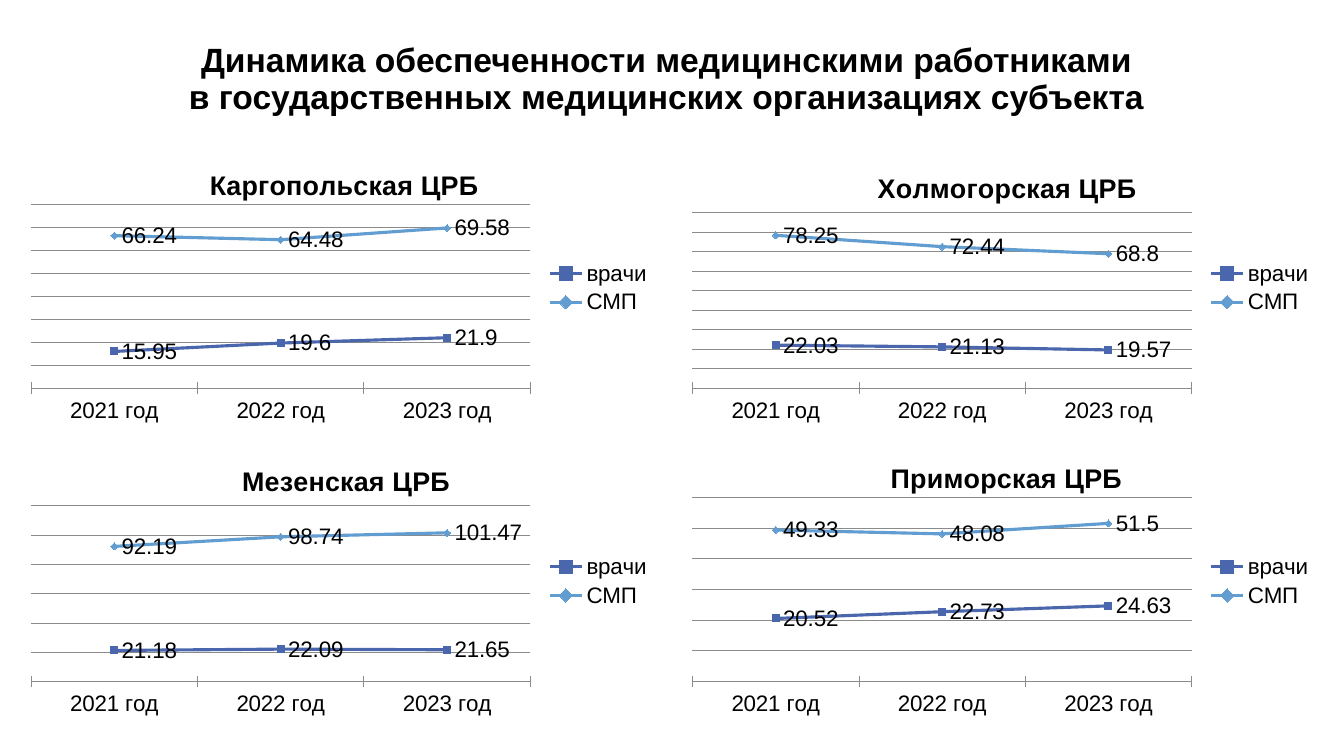
from dataclasses import dataclass

from lxml import etree
from pptx import Presentation
from pptx.chart.data import CategoryChartData
from pptx.dml.color import RGBColor
from pptx.enum.chart import (XL_CHART_TYPE, XL_LABEL_POSITION, XL_LEGEND_POSITION,
                             XL_MARKER_STYLE, XL_TICK_LABEL_POSITION, XL_TICK_MARK)
from pptx.enum.text import MSO_ANCHOR, PP_ALIGN
from pptx.oxml.ns import qn
from pptx.util import Inches, Pt

LINE_MARKERS = XL_CHART_TYPE.LINE_MARKERS
LABEL_RIGHT = XL_LABEL_POSITION.RIGHT
LEGEND_RIGHT = XL_LEGEND_POSITION.RIGHT
TICK_CROSS = XL_TICK_MARK.CROSS
LABELS_LOW = XL_TICK_LABEL_POSITION.NEXT_TO_AXIS
MARKERS = (XL_MARKER_STYLE.SQUARE, XL_MARKER_STYLE.DIAMOND)
MIDDLE = MSO_ANCHOR.MIDDLE
CENTER = PP_ALIGN.CENTER


@dataclass(frozen=True)
class Theme:
    font: str = "Arial"
    text: RGBColor = RGBColor(0, 0, 0)
    paper: RGBColor = RGBColor(255, 255, 255)
    grid: RGBColor = RGBColor.from_string("8B8B8B")
    series: tuple = (RGBColor.from_string("4A66AC"), RGBColor.from_string("629DD1"))
    heading_size: float = 24
    chart_title_size: float = 19.2
    chart_size: float = 16
    grid_width: float = 0.5
    series_width: float = 2.25
    marker_size: int = 5


THEME = Theme()
YEARS = ("2021 год", "2022 год", "2023 год")
STAFF = ("врачи", "СМП")


@dataclass(frozen=True)
class Hospital:
    name: str
    doctors: tuple
    nurses: tuple
    axis_max: int
    axis_step: int
    title_at: tuple  # left and top, as shares of the chart
    plot_top: float  # share of the chart height


# Row by row, left to right
HOSPITALS = (
    Hospital("Каргопольская ЦРБ", (15.95, 19.6, 21.9), (66.24, 64.48, 69.58),
             80, 10, (0.29, 0.05), 0.2),
    Hospital("Холмогорская ЦРБ", (22.03, 21.13, 19.57), (78.25, 72.44, 68.8),
             90, 10, (0.3, 0.06), 0.23),
    Hospital("Мезенская ЦРБ", (21.18, 22.09, 21.65), (92.19, 98.74, 101.47),
             120, 20, (0.34, 0.06), 0.23),
    Hospital("Приморская ЦРБ", (20.52, 22.73, 24.63), (49.33, 48.08, 51.5),
             60, 10, (0.32, 0.05), 0.2),
)
PLOT_LEFT, PLOT_WIDTH, PLOT_BOTTOM = 0.02, 0.775, 0.86


def style_font(font, size, bold=False):
    font.name = THEME.font
    font.size = Pt(size)
    font.bold = bold
    font.color.rgb = THEME.text


def style_line(line, color, width):
    line.color.rgb = color
    line.width = Pt(width)


def set_layout(parent, settings):
    """Fix the place of a chart part, in shares of the chart."""
    layout = parent.find(qn("c:layout"))
    if layout is None:
        layout = etree.Element(qn("c:layout"))
        text = parent.find(qn("c:tx"))
        parent.insert(0 if text is None else parent.index(text) + 1, layout)
    for child in list(layout):
        layout.remove(child)
    manual = etree.SubElement(layout, qn("c:manualLayout"))
    for tag, value in settings.items():
        etree.SubElement(manual, qn(f"c:{tag}")).set("val", str(value))


def add_heading(page, text, left, top, width, height):
    box = page.shapes.add_textbox(Inches(left), Inches(top), Inches(width), Inches(height))
    frame = box.text_frame
    frame.word_wrap = True
    frame.vertical_anchor = MIDDLE
    frame.margin_left = frame.margin_right = frame.margin_top = frame.margin_bottom = 0
    para = frame.paragraphs[0]
    para.text = text
    para.alignment = CENTER
    para.line_spacing = 0.9
    for span in para.runs:
        style_font(span.font, THEME.heading_size, bold=True)


def style_axes(chart, hospital):
    years = chart.category_axis
    years.major_tick_mark = TICK_CROSS
    years.tick_label_position = LABELS_LOW
    style_line(years.format.line, THEME.grid, THEME.grid_width)

    values = chart.value_axis
    values.minimum_scale = 0
    values.maximum_scale = hospital.axis_max
    values.major_unit = hospital.axis_step
    values.has_major_gridlines = True
    style_line(values.major_gridlines.format.line, THEME.grid, THEME.grid_width)
    values.visible = False


def style_series(series, color, marker_style):
    series.smooth = False
    style_line(series.format.line, color, THEME.series_width)
    marker = series.marker
    marker.style = marker_style
    marker.size = THEME.marker_size
    marker.format.fill.solid()
    marker.format.fill.fore_color.rgb = color
    style_line(marker.format.line, color, 0.75)
    labels = series.data_labels
    labels.show_value = True
    labels.position = LABEL_RIGHT
    style_font(labels.font, THEME.chart_size)


def add_hospital_chart(page, hospital, left, top, width, height):
    data = CategoryChartData()
    data.categories = YEARS
    for name, values in zip(STAFF, (hospital.doctors, hospital.nurses)):
        data.add_series(name, values)
    chart = page.shapes.add_chart(LINE_MARKERS, Inches(left), Inches(top),
                                  Inches(width), Inches(height), data).chart
    style_font(chart.font, THEME.chart_size)
    chart.plots[0].vary_by_categories = False

    # Title
    chart.has_title = True
    para = chart.chart_title.text_frame.paragraphs[0]
    para.text = hospital.name
    style_font(para.runs[0].font, THEME.chart_title_size, bold=True)
    title_x, title_y = hospital.title_at
    set_layout(chart.chart_title._element,
               {"xMode": "edge", "yMode": "edge", "x": title_x, "y": title_y})

    # Legend
    chart.has_legend = True
    chart.legend.position = LEGEND_RIGHT
    chart.legend.include_in_layout = False
    style_font(chart.legend.font, THEME.chart_size)

    # Plot
    style_axes(chart, hospital)
    for series, color, marker_style in zip(chart.series, THEME.series, MARKERS):
        style_series(series, color, marker_style)
    plot_area = chart._chartSpace.chart.plotArea
    set_layout(plot_area, {
        "layoutTarget": "inner", "xMode": "edge", "yMode": "edge",
        "x": PLOT_LEFT, "y": hospital.plot_top, "w": PLOT_WIDTH,
        "h": round(PLOT_BOTTOM - hospital.plot_top, 2)})
    properties = etree.SubElement(plot_area, qn("c:spPr"))
    fill = etree.SubElement(properties, qn("a:solidFill"))
    etree.SubElement(fill, qn("a:srgbClr")).set("val", str(THEME.paper))


def add_chart_grid(page, left, top, width, height, columns=2, gap_x=0.17, gap_y=0.14):
    rows = len(HOSPITALS) // columns
    cell_width = (width - gap_x * (columns - 1)) / columns
    cell_height = (height - gap_y * (rows - 1)) / rows
    for index, hospital in enumerate(HOSPITALS):
        row, column = divmod(index, columns)
        add_hospital_chart(page, hospital, left + column * (cell_width + gap_x),
                           top + row * (cell_height + gap_y), cell_width, cell_height)


def main():
    deck = Presentation()
    deck.slide_width, deck.slide_height = Inches(13.33), Inches(7.5)
    page = deck.slides.add_slide(deck.slide_layouts[6])
    add_heading(page, "Динамика обеспеченности медицинскими работниками\v"
                      "в государственных медицинских организациях субъекта",
                0.98, 0.26, 11.26, 1.07)
    add_chart_grid(page, 0.18, 1.47, 12.95, 5.68)
    deck.save("out.pptx")


if __name__ == "__main__":
    main()
